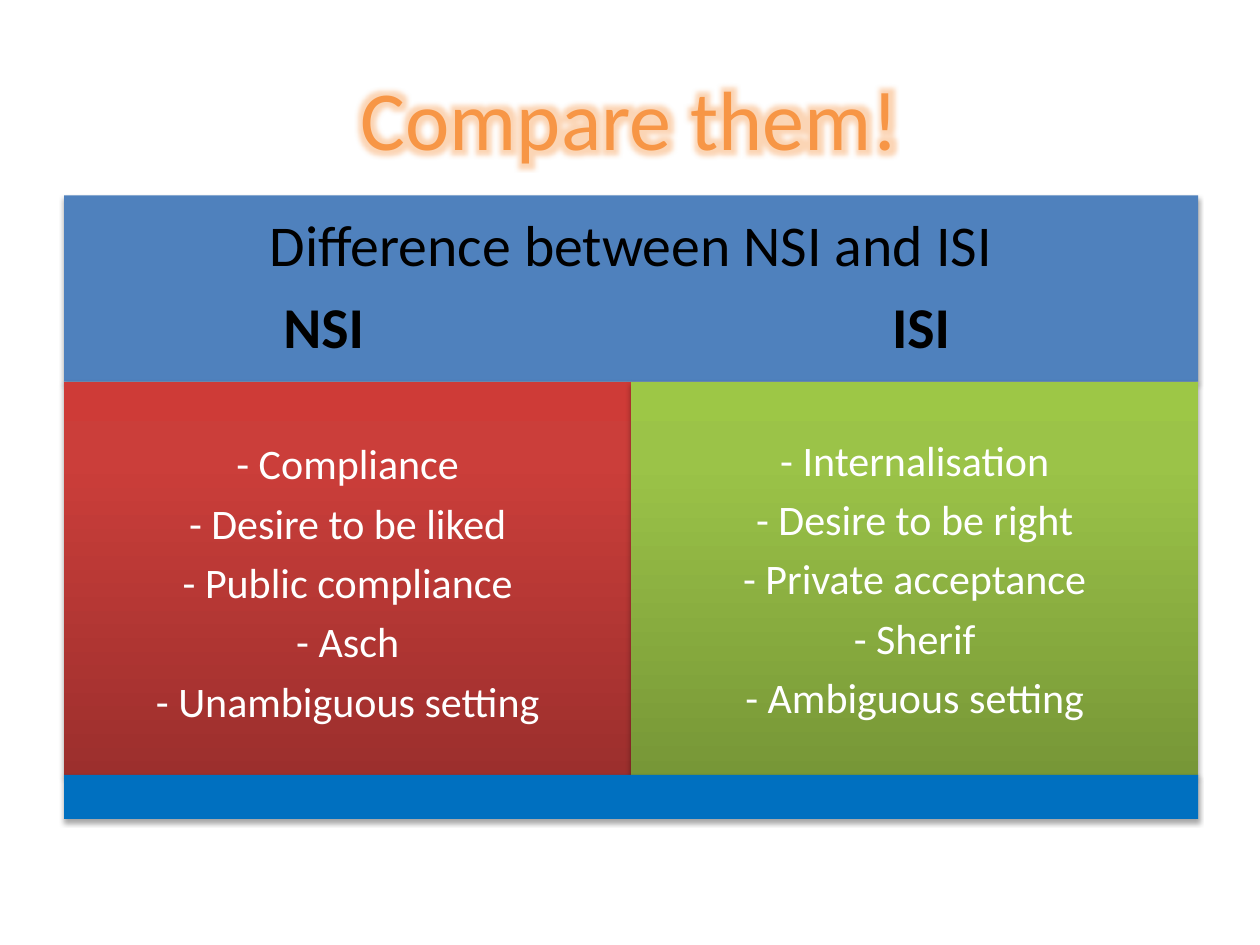
from copy import deepcopy

from lxml import etree
from pptx import Presentation
from pptx.dml.color import RGBColor
from pptx.enum.shapes import MSO_SHAPE
from pptx.enum.text import MSO_ANCHOR, PP_ALIGN
from pptx.oxml.ns import qn
from pptx.util import Inches, Pt

RECTANGLE = MSO_SHAPE.RECTANGLE
TOP, MIDDLE = MSO_ANCHOR.TOP, MSO_ANCHOR.MIDDLE
LEFT, CENTER = PP_ALIGN.LEFT, PP_ALIGN.CENTER

FONT = "Calibri"
COLORS = {
    "title": "F79646", "header": "4F81BD", "footer": "0070C0",
    "dark": "000000", "light": "FFFFFF",
}
RED = [(0, "9C2F2D"), (0.8, "CB3E3A"), (1, "CE3B37")]
GREEN = [(0, "779737"), (0.8, "9BC348"), (1, "9DC746")]


class ComparisonSlide:
    def __init__(self, deck):
        self.page = deck.slides.add_slide(deck.slide_layouts[6])

    def add_effect(self, parent, kind, color, alpha, **settings):
        effects = etree.SubElement(parent, qn("a:effectLst"))
        effect = etree.SubElement(effects, qn(f"a:{kind}"))
        for name, value in settings.items():
            effect.set(name, str(value))
        tint = etree.SubElement(effect, qn("a:srgbClr"), val=color)
        etree.SubElement(tint, qn("a:alpha"), val=str(alpha * 1000))

    def title(self, text, left, top, width, height):
        box = self.page.shapes.add_textbox(
            Inches(left), Inches(top), Inches(width), Inches(height))
        frame = box.text_frame
        frame.word_wrap, frame.vertical_anchor = True, MIDDLE
        para = frame.paragraphs[0]
        para.alignment = CENTER
        span = para.add_run()
        span.text = text
        span.font.size = Pt(48)
        span.font.color.rgb = RGBColor.from_string(COLORS["title"])
        # The glow must come between the colour and the font name
        self.add_effect(span._r.get_or_add_rPr(), "glow", COLORS["title"], 40,
                        rad=Pt(11))
        span.font.name = FONT

    def panel(self, left, top, width, height, color=None, stops=None):
        box = self.page.shapes.add_shape(
            RECTANGLE, Inches(left), Inches(top), Inches(width), Inches(height))
        box.line.fill.background()
        if stops:
            self.gradient(box, stops)
        else:
            box.fill.solid()
            box.fill.fore_color.rgb = RGBColor.from_string(color)
        self.add_effect(box._element.spPr, "outerShdw", COLORS["dark"], 35,
                        blurRad=Pt(3.1), dist=Pt(1.8), dir=90 * 60000,
                        rotWithShape=0)
        return box

    def gradient(self, box, stops):
        box.fill.gradient()
        box.fill.gradient_angle = 90
        stop_list = box._element.spPr.find(f".//{qn('a:gsLst')}")
        stop_list.append(deepcopy(stop_list[-1]))
        for stop, (position, color) in zip(box.fill.gradient_stops, stops):
            stop.position = position
            stop.color.rgb = RGBColor.from_string(color)

    def set_text(self, box, lines, size, color, space, inset, top_inset, anchor):
        frame = box.text_frame
        frame.word_wrap, frame.vertical_anchor = True, anchor
        frame.margin_left = frame.margin_right = Inches(inset)
        frame.margin_bottom = Inches(inset)
        frame.margin_top = Inches(top_inset)
        for index, text in enumerate(lines):
            para = frame.add_paragraph() if index else frame.paragraphs[0]
            para.text = text
            para.alignment = CENTER
            para.line_spacing, para.space_after = 0.9, Pt(space)
            para.font.size, para.font.name = Pt(size), FONT
            para.font.color.rgb = RGBColor.from_string(color)
        return frame

    def header(self, heading, names, tab_stops, *place):
        box = self.panel(*place, color=COLORS["header"])
        name_line = "".join(f"\t{name}" for name in names)
        frame = self.set_text(box, [heading, name_line], 33, COLORS["dark"],
                              11.5, 0.14, 0.14, MIDDLE)
        para = frame.paragraphs[1]
        para.alignment = LEFT
        para.font.bold = True
        tabs = etree.Element(qn("a:tabLst"))
        for position in tab_stops:
            etree.SubElement(tabs, qn("a:tab"), pos=str(Inches(position)),
                             algn="l")
        para._p.get_or_add_pPr().find(qn("a:defRPr")).addprevious(tabs)

    def column(self, lines, stops, top_inset, *place):
        box = self.panel(*place, stops=stops)
        self.set_text(box, [f"- {line}" for line in lines], 24,
                      COLORS["light"], 8, 0.1, top_inset, TOP)


def main():
    deck = Presentation()
    deck.slide_width, deck.slide_height = Inches(10), Inches(7.5)
    slide = ComparisonSlide(deck)

    # Title and header band
    left, width = 0.51, 9
    slide.title("Compare them!", 0.5, 0.3, width, 1.25)
    slide.header("Difference between NSI and ISI", ["NSI", "ISI"], [1.6, 6.43],
                 left, 1.55, width, 1.48)

    # Two columns side by side
    columns = [
        (["Compliance", "Desire to be liked", "Public compliance", "Asch",
          "Unambiguous setting"], RED, 0.49),
        (["Internalisation", "Desire to be right", "Private acceptance",
          "Sherif", "Ambiguous setting"], GREEN, 0.46),
    ]
    half = width / 2
    for index, (lines, stops, top_inset) in enumerate(columns):
        slide.column(lines, stops, top_inset,
                     left + index * half, 3.03, half, 3.12)

    # Footer band
    slide.panel(left, 6.15, width, 0.35, color=COLORS["footer"])
    deck.save("out.pptx")


if __name__ == "__main__":
    main()
